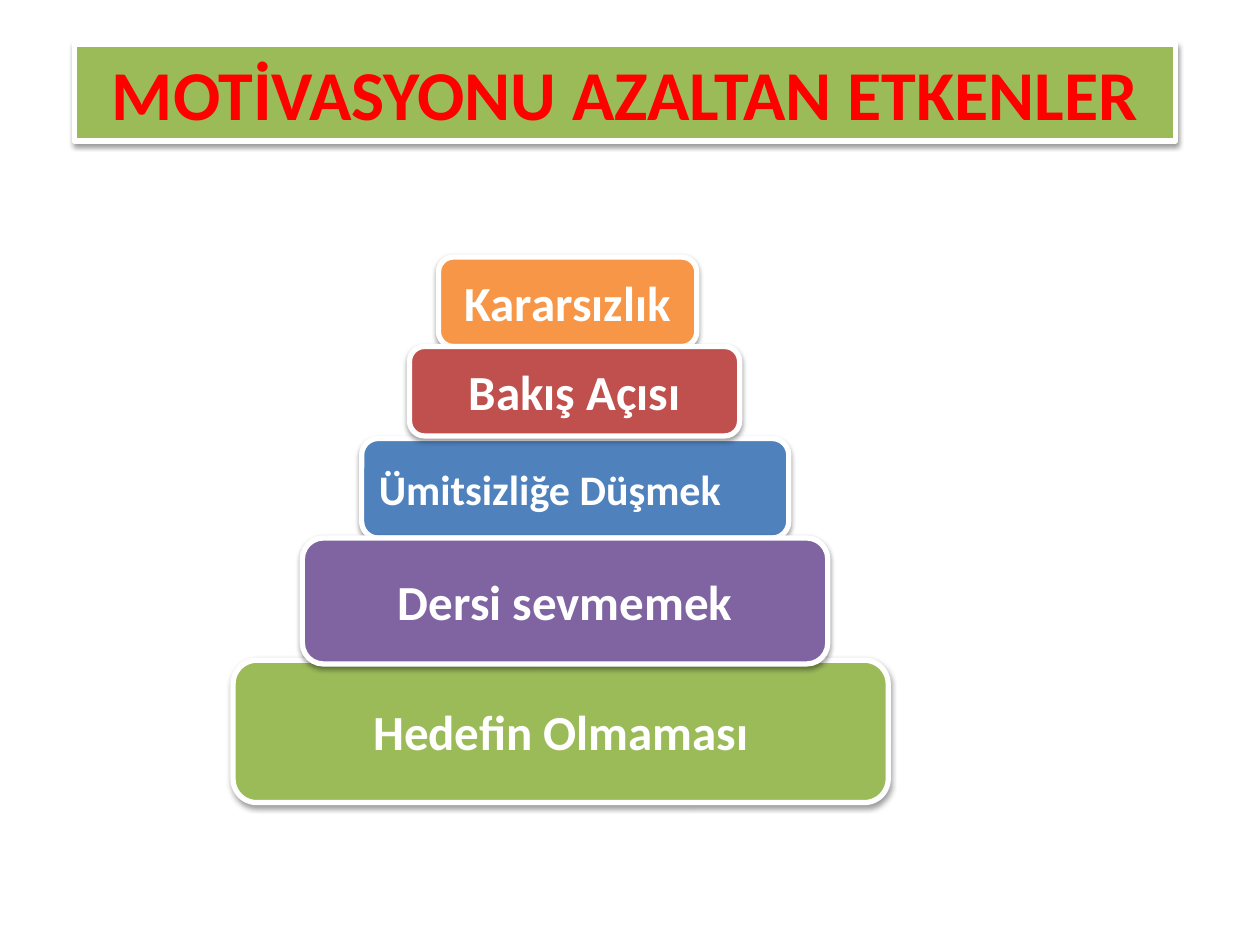
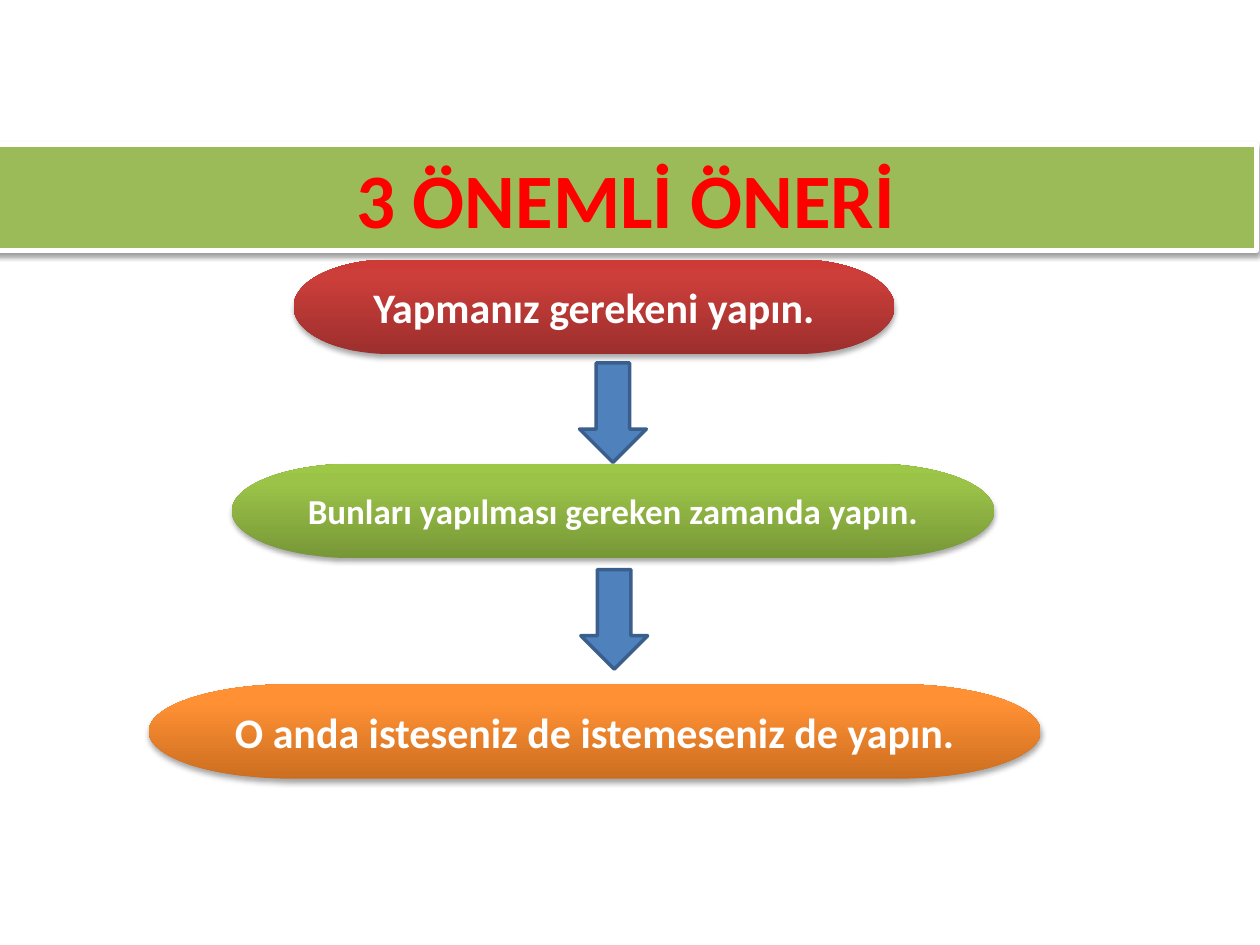
from dataclasses import dataclass

from lxml import etree
from pptx import Presentation
from pptx.dml.color import RGBColor
from pptx.enum.shapes import MSO_SHAPE
from pptx.enum.text import MSO_ANCHOR, MSO_AUTO_SIZE, PP_ALIGN
from pptx.oxml import parse_xml
from pptx.oxml.ns import qn
from pptx.shapes.autoshape import Shape
from pptx.slide import Slide
from pptx.util import Emu, Pt

RECT = MSO_SHAPE.RECTANGLE
ROUND = MSO_SHAPE.ROUNDED_RECTANGLE
PILL = MSO_SHAPE.FLOWCHART_TERMINATOR
ARROW = MSO_SHAPE.DOWN_ARROW
LEFT, MID = PP_ALIGN.LEFT, PP_ALIGN.CENTER
TOP, CENTER = MSO_ANCHOR.TOP, MSO_ANCHOR.MIDDLE
GROW = MSO_AUTO_SIZE.SHAPE_TO_FIT_TEXT

PX = 9144  # 100 px to the inch
FONT = "Calibri"
WHITE, RED = "FFFFFF", "FF0000"
BLUE, EDGE = "4F81BD", "3A5F8C"
GREEN, ORANGE, PURPLE, BRICK = "9BBB59", "F79646", "8064A2", "C0504D"
NS = 'xmlns:a="http://schemas.openxmlformats.org/drawingml/2006/main"'


@dataclass(frozen=True)
class Box:
    x: int
    y: int
    w: int
    h: int


@dataclass(frozen=True)
class Step:
    text: str
    box: Box
    fill: str
    size: int = 28
    align: PP_ALIGN = MID


@dataclass(frozen=True)
class Tip:
    text: str
    box: Box
    shades: tuple[str, str, str]
    size: int = 24


STEPS = (
    Step("Ümitsizliğe Düşmek", Box(287, 348, 339, 79), BLUE, 24, LEFT),
    Step("Hedefin Olmaması", Box(185, 524, 520, 113), GREEN),
    Step("Kararsızlık", Box(348, 204, 205, 71), ORANGE),
    Step("Dersi sevmemek", Box(240, 427, 417, 100), PURPLE),
    Step("Bakış Açısı", Box(325, 275, 262, 71), BRICK),
)
TIPS = (
    Tip("Yapmanız gerekeni yapın.", Box(233, 206, 477, 75),
        ("9C2F2D", "CB3E3A", "CE3B37")),
    Tip("Bunları yapılması gereken zamanda yapın.", Box(184, 368, 605, 75),
        ("779737", "9BC348", "9DC746"), 20),
    Tip("O anda isteseniz de istemeseniz de yapın.", Box(118, 543, 708, 75),
        ("CC6E20", "FF9034", "FF9136")),
)
ARROWS = (Box(460, 288, 53, 79), Box(461, 452, 53, 79))


def rgb(code: str) -> RGBColor:
    return RGBColor.from_string(code)


def add(slide: Slide, kind: MSO_SHAPE, box: Box) -> Shape:
    """Place a preset shape without a shadow."""
    sides = (Emu(n * PX) for n in (box.x, box.y, box.w, box.h))
    shape = slide.shapes.add_shape(kind, *sides)
    shape.shadow.inherit = False
    return shape


def paint(shape: Shape, fill: str, line: str = WHITE, width: int = 3) -> None:
    shape.fill.solid()
    shape.fill.fore_color.rgb = rgb(fill)
    shape.line.color.rgb = rgb(line)
    shape.line.width = Pt(width)


def blend(shape: Shape, shades: tuple[str, str, str]) -> None:
    """Fill with a gradient that runs from the foot to the top."""
    stops = "".join(
        f'<a:gs pos="{pos * 1000}"><a:srgbClr val="{code}"/></a:gs>'
        for pos, code in zip((0, 80, 100), shades))
    grad = parse_xml(f'<a:gradFill {NS} rotWithShape="1"><a:gsLst>{stops}'
                     '</a:gsLst><a:lin ang="16200000" scaled="0"/></a:gradFill>')
    shape.line.fill.background()
    shape._element.spPr.find(qn("a:prstGeom")).addnext(grad)


def shade(shape: Shape, alpha: int, dist: float) -> None:
    """Cast a soft black shadow straight down."""
    effects = shape._element.spPr.find(qn("a:effectLst"))
    cast = etree.SubElement(
        effects, qn("a:outerShdw"), blurRad=str(Pt(3.1)), dist=str(Pt(dist)),
        dir="5400000", rotWithShape="0")
    black = etree.SubElement(cast, qn("a:srgbClr"), val="000000")
    etree.SubElement(black, qn("a:alpha"), val=str(alpha * 1000))


def write(shape: Shape, text: str, size: int, color: str = WHITE,
          align: PP_ALIGN = MID, anchor: MSO_ANCHOR = CENTER) -> None:
    frame = shape.text_frame
    frame.word_wrap = True
    frame.vertical_anchor = anchor
    para = frame.paragraphs[0]
    para.text = text
    para.alignment = align
    font = para.font
    font.name, font.size, font.bold = FONT, Pt(size), True
    font.color.rgb = rgb(color)


def title(slide: Slide, text: str, box: Box, size: int) -> None:
    band = add(slide, RECT, box)
    paint(band, GREEN)
    shade(band, 38, 1.6)
    write(band, text, size, RED, anchor=TOP)
    band.text_frame.auto_size = GROW


def causes(slide: Slide) -> None:
    title(slide, "MOTİVASYONU AZALTAN ETKENLER", Box(59, 35, 874, 77), 40)
    for step in STEPS:
        shape = add(slide, ROUND, step.box)
        paint(shape, step.fill)
        shade(shape, 38, 1.6)
        write(shape, step.text, step.size, align=step.align)


def advice(slide: Slide) -> None:
    title(slide, "3 ÖNEMLİ ÖNERİ", Box(-3, 115, 1000, 84), 44)
    for tip in TIPS:
        shape = add(slide, PILL, tip.box)
        blend(shape, tip.shades)
        shade(shape, 35, 1.8)
        write(shape, tip.text, tip.size)
    for box in ARROWS:
        paint(add(slide, ARROW, box), BLUE, EDGE, 2)


def main() -> None:
    deck = Presentation()
    deck.slide_width, deck.slide_height = Emu(1000 * PX), Emu(750 * PX)
    blank = deck.slide_layouts[6]
    for draw in (causes, advice):
        draw(deck.slides.add_slide(blank))
    deck.save("out.pptx")


if __name__ == "__main__":
    main()
